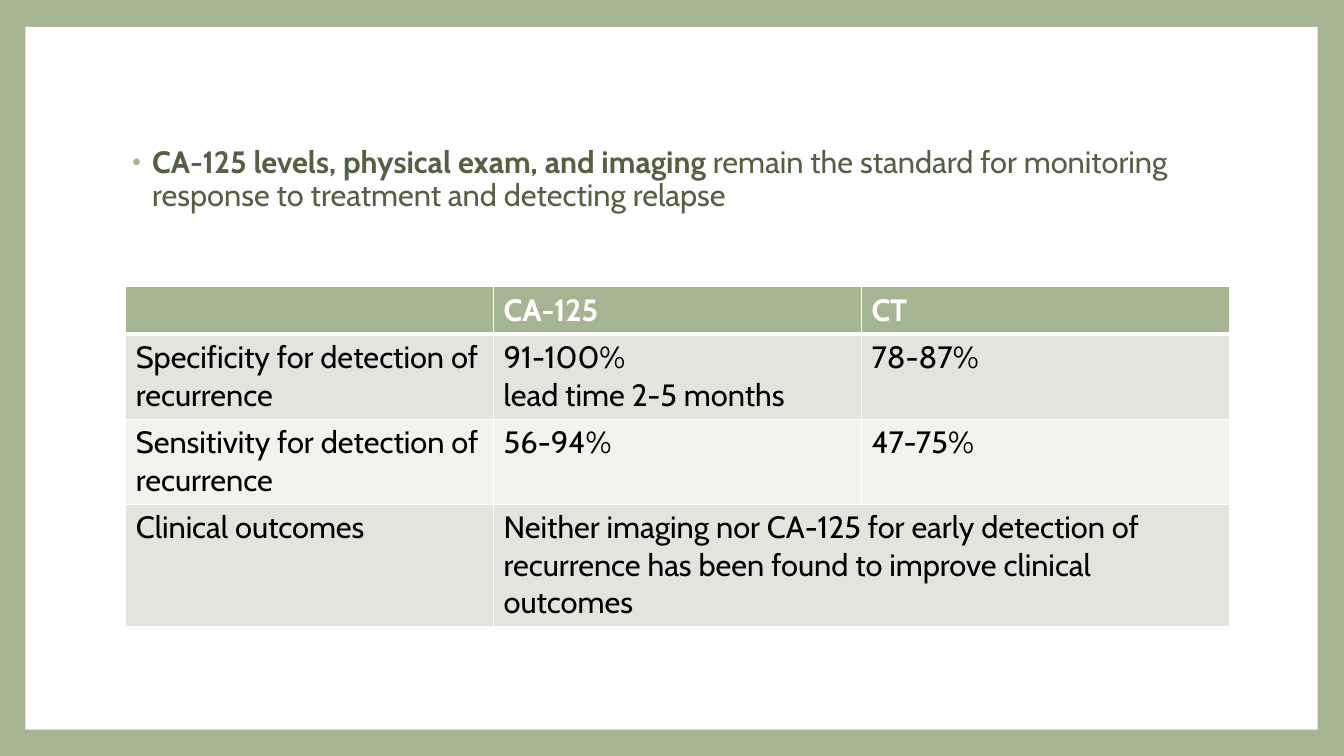
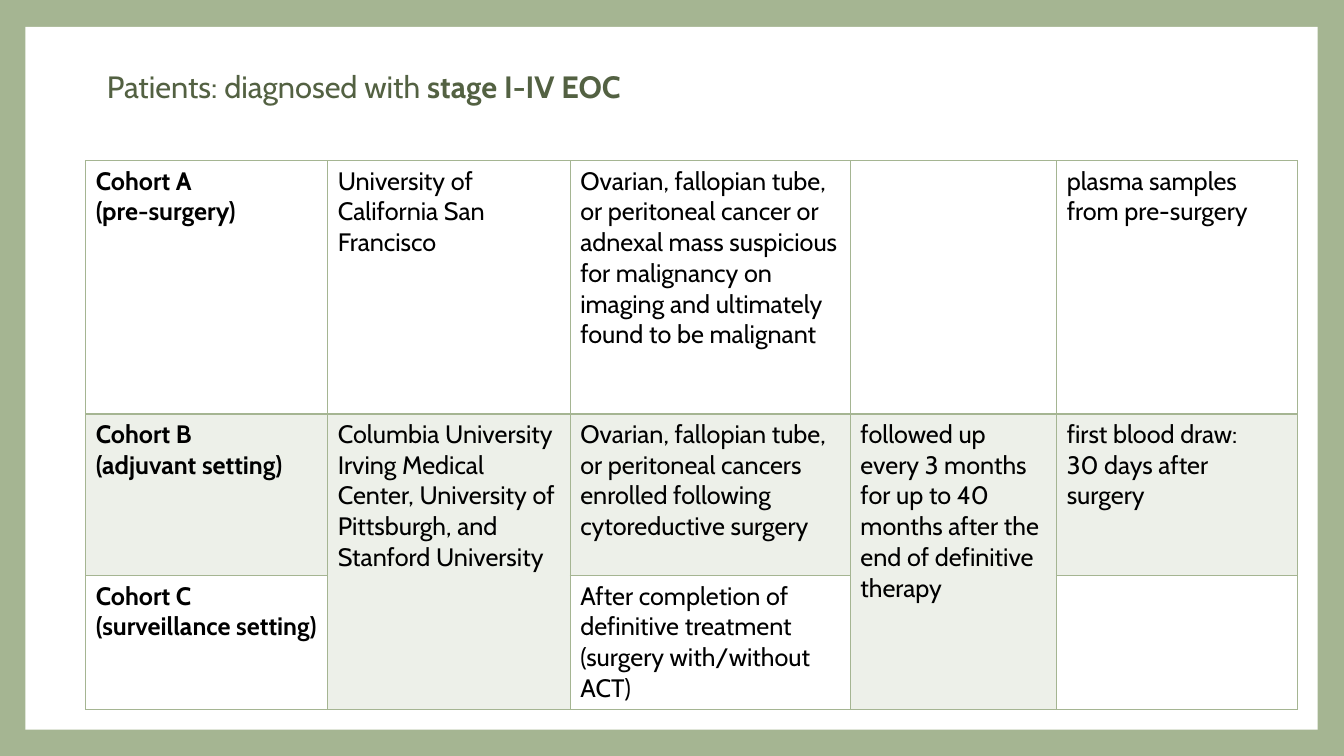
import dataclasses

import pptx
import pptx.dml.color
import pptx.enum.shapes
import pptx.enum.text
import pptx.oxml
import pptx.oxml.ns
import pptx.util
from pptx.util import Cm


@dataclasses.dataclass(frozen=True)
class Theme:
    font: str = "Cabin"
    green: str = "A5B592"
    dark_green: str = "536142"
    white: str = "FFFFFF"
    black: str = "000000"
    band_dark: str = "E1E5DC"
    band_light: str = "F0F3EE"
    tint: str = "EDF0E9"
    large: int = 22
    small: int = 18


theme = Theme()
rgb = pptx.dml.color.RGBColor.from_string


def write_text(text_frame, text, size=theme.large, color=theme.black, line_spacing=1.0, space_before=0):
    for index, line in enumerate(text.split("\n")):
        paragraph = text_frame.add_paragraph() if index else text_frame.paragraphs[0]
        paragraph.line_spacing = line_spacing
        paragraph.space_before = pptx.util.Pt(space_before)
        for position, piece in enumerate(line.split("**")):
            if piece:
                run = paragraph.add_run()
                run.text = piece
                run.font.name = theme.font
                run.font.size = pptx.util.Pt(size)
                run.font.bold = position % 2 == 1
                run.font.color.rgb = rgb(color)


def add_border(cell, side, color, width):
    namespace = pptx.oxml.ns.nsdecls("a")
    cell_properties = cell._tc.get_or_add_tcPr()
    cell_properties.append(pptx.oxml.parse_xml(
        f'<a:ln{side} {namespace} w="{pptx.util.Pt(width)}"><a:solidFill>'
        f'<a:srgbClr val="{color}"/></a:solidFill></a:ln{side}>'
    ))


bullet_xml = [
    f'<a:buClr {{}}><a:srgbClr val="{theme.green}"/></a:buClr>',
    '<a:buSzPct {} val="80000"/>',
    '<a:buChar {} char="•"/>',
]

slide_contents = [
    {
        "body": "**CA-125 levels, physical exam, and imaging** remain the standard for monitoring "
                "response to treatment and detecting relapse",
        "body_box": (2.94, 3.58, 27.43, 3),
        "indent": (0.64, -0.5),
        "bullet": bullet_xml,
        "table_corner": (3.17, 7.22),
        "columns": [9.27, 9.27, 9.27],
        "rows": [1.16, 2.14, 2.14, 3.07],
        "cells": [
            ["", "**CA-125**", "**CT**"],
            ["Specificity for detection of recurrence", "91-100%\nlead time 2-5 months", "78-87%"],
            ["Sensitivity for detection of recurrence", "56-94%", "47-75%"],
            ["Clinical outcomes",
             "Neither imaging nor CA-125 for early detection of recurrence "
             "has been found to improve clinical outcomes", ""],
        ],
        "merges": [((3, 1), (3, 2))],
        "fills": [theme.green, theme.band_dark, theme.band_light, theme.band_dark],
        "text_colors": [theme.white, theme.black, theme.black, theme.black],
        "size": theme.large,
        "border": theme.white,
        "header_line": 3,
    },
    {
        "body": "Patients: diagnosed with **stage I-IV EOC**",
        "body_box": (2.31, 1.69, 27.43, 1.6),
        "indent": (0.13, 0),
        "bullet": ["<a:buNone {}/>"],
        "table_corner": (2.16, 4.05),
        "columns": [6.1, 6.11, 7.06, 5.2, 6.07],
        "rows": [6.38, 4.08, 3.36],
        "cells": [
            ["**Cohort A**\n**(pre-surgery)**",
             "University of California San Francisco",
             "Ovarian, fallopian tube, or peritoneal cancer or adnexal mass suspicious "
             "for malignancy on imaging and ultimately found to be malignant",
             "",
             "plasma samples from pre-surgery"],
            ["**Cohort B**\n**(adjuvant setting)**",
             "Columbia University Irving Medical Center, University of Pittsburgh, and Stanford University",
             "Ovarian, fallopian tube, or peritoneal cancers enrolled following cytoreductive surgery",
             "followed up every 3 months for up to 40 months after the end of definitive therapy",
             "first blood draw:\n30 days after surgery"],
            ["**Cohort C**\n**(surveillance setting)**",
             "",
             "After completion of definitive treatment (surgery with/without ACT)",
             "",
             ""],
        ],
        "merges": [((1, 1), (2, 1)), ((1, 3), (2, 3))],
        "fills": [None, theme.tint, None],
        "text_colors": [theme.black] * 3,
        "size": theme.small,
        "border": theme.green,
        "header_line": 1.5,
    },
]

presentation = pptx.Presentation()
presentation.slide_width = Cm(33.87)
presentation.slide_height = Cm(19.05)

layout = presentation.slide_layouts[1]
layout.background.fill.solid()
layout.background.fill.fore_color.rgb = rgb(theme.green)

for content in slide_contents:
    slide = presentation.slides.add_slide(layout)
    title = slide.shapes.title.element
    title.getparent().remove(title)

    panel = slide.shapes.add_shape(
        pptx.enum.shapes.MSO_SHAPE.RECTANGLE, Cm(0.64), Cm(0.68), Cm(32.57), Cm(17.71)
    )
    panel.shadow.inherit = False
    panel.fill.solid()
    panel.fill.fore_color.rgb = rgb(theme.white)
    panel.line.fill.background()
    slide.shapes.element.insert(2, panel.element)

    body = slide.placeholders[1]
    body.left, body.top, body.width, body.height = map(Cm, content["body_box"])
    body.text_frame.auto_size = pptx.enum.text.MSO_AUTO_SIZE.NONE
    body.text_frame.vertical_anchor = pptx.enum.text.MSO_ANCHOR.TOP
    write_text(body.text_frame, content["body"], color=theme.dark_green, line_spacing=0.9, space_before=14)
    paragraph_properties = body.text_frame.paragraphs[0]._p.get_or_add_pPr()
    for name, length in zip(("marL", "indent"), content["indent"]):
        paragraph_properties.set(name, str(Cm(length)))
    for xml in content["bullet"]:
        paragraph_properties.append(pptx.oxml.parse_xml(xml.format(pptx.oxml.ns.nsdecls("a"))))

    columns, rows = content["columns"], content["rows"]
    left, top = content["table_corner"]
    table = slide.shapes.add_table(
        len(rows), len(columns), Cm(left), Cm(top), Cm(sum(columns)), Cm(sum(rows))
    ).table
    table.first_row = False
    table.horz_banding = False
    for column, width in zip(table.columns, columns):
        column.width = Cm(width)
    for row, height in zip(table.rows, rows):
        row.height = Cm(height)
    for first, last in content["merges"]:
        table.cell(*first).merge(table.cell(*last))

    for row_index, texts in enumerate(content["cells"]):
        fill_color = content["fills"][row_index]
        top_line = content["header_line"] if row_index == 1 else 1
        bottom_line = content["header_line"] if row_index == 0 else 1
        for column_index, text in enumerate(texts):
            cell = table.cell(row_index, column_index)
            for side, width in (("L", 1), ("R", 1), ("T", top_line), ("B", bottom_line)):
                add_border(cell, side, content["border"], width)
            if fill_color:
                cell.fill.solid()
                cell.fill.fore_color.rgb = rgb(fill_color)
            else:
                cell.fill.background()
            write_text(cell.text_frame, text, size=content["size"], color=content["text_colors"][row_index])

presentation.save("out.pptx")
